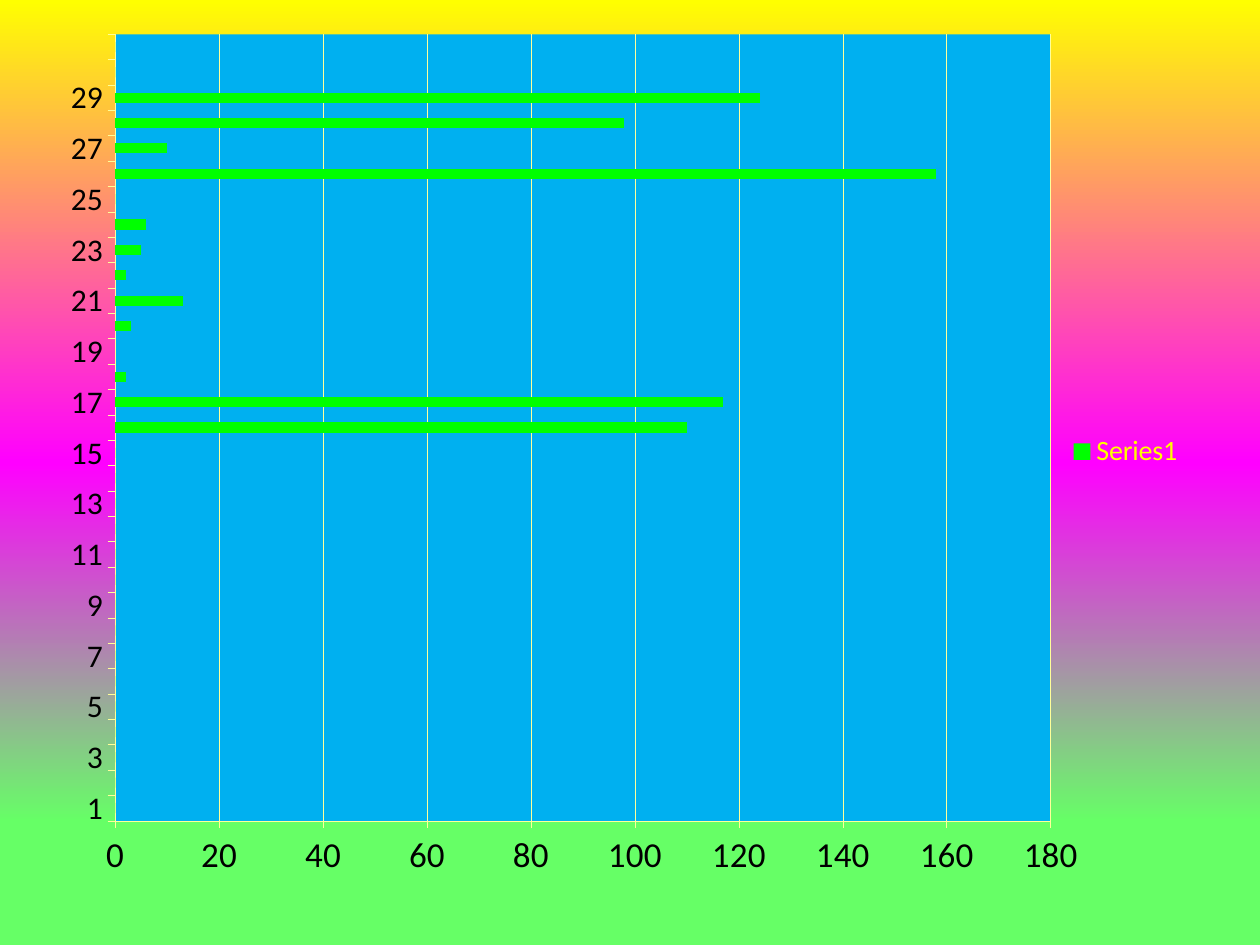
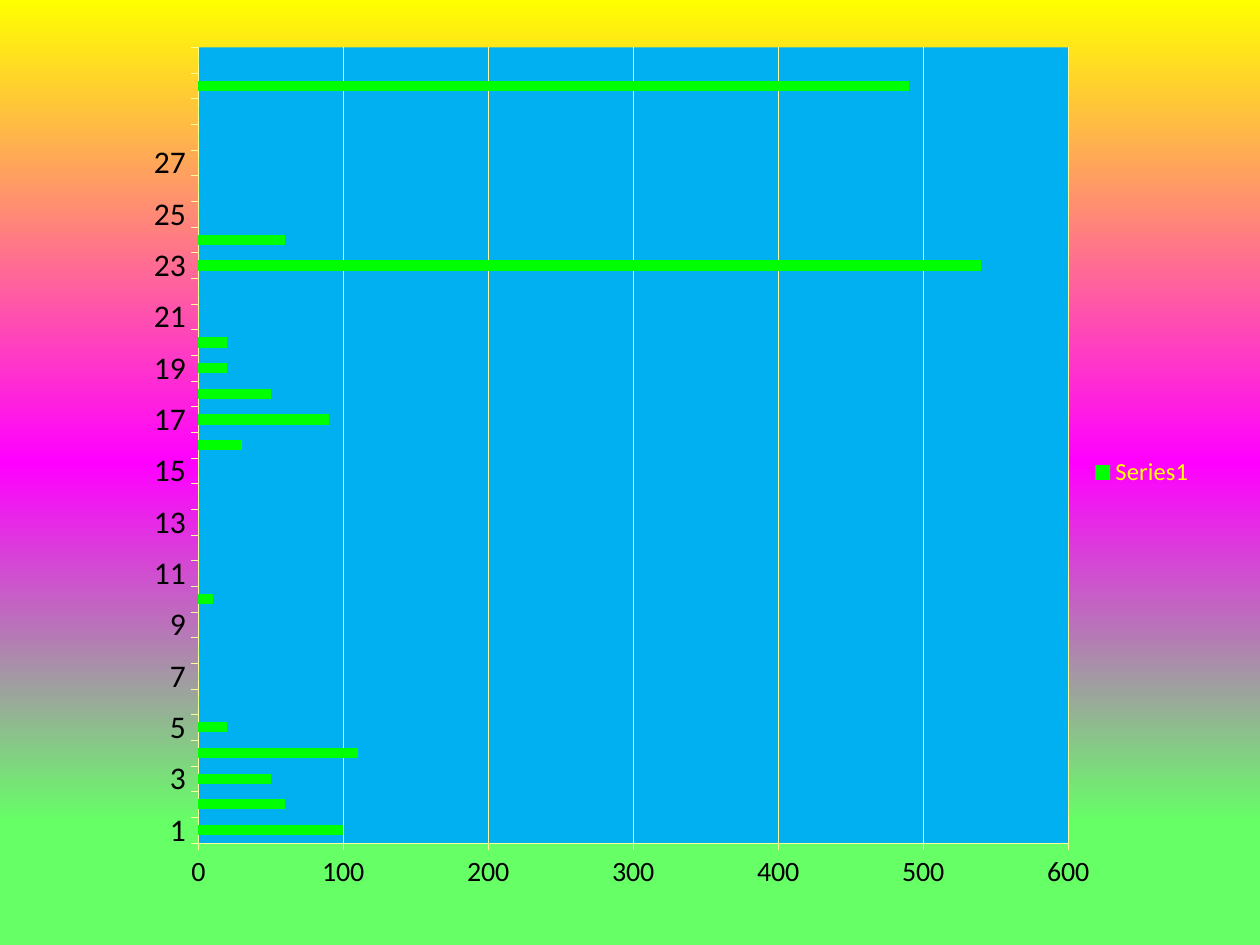
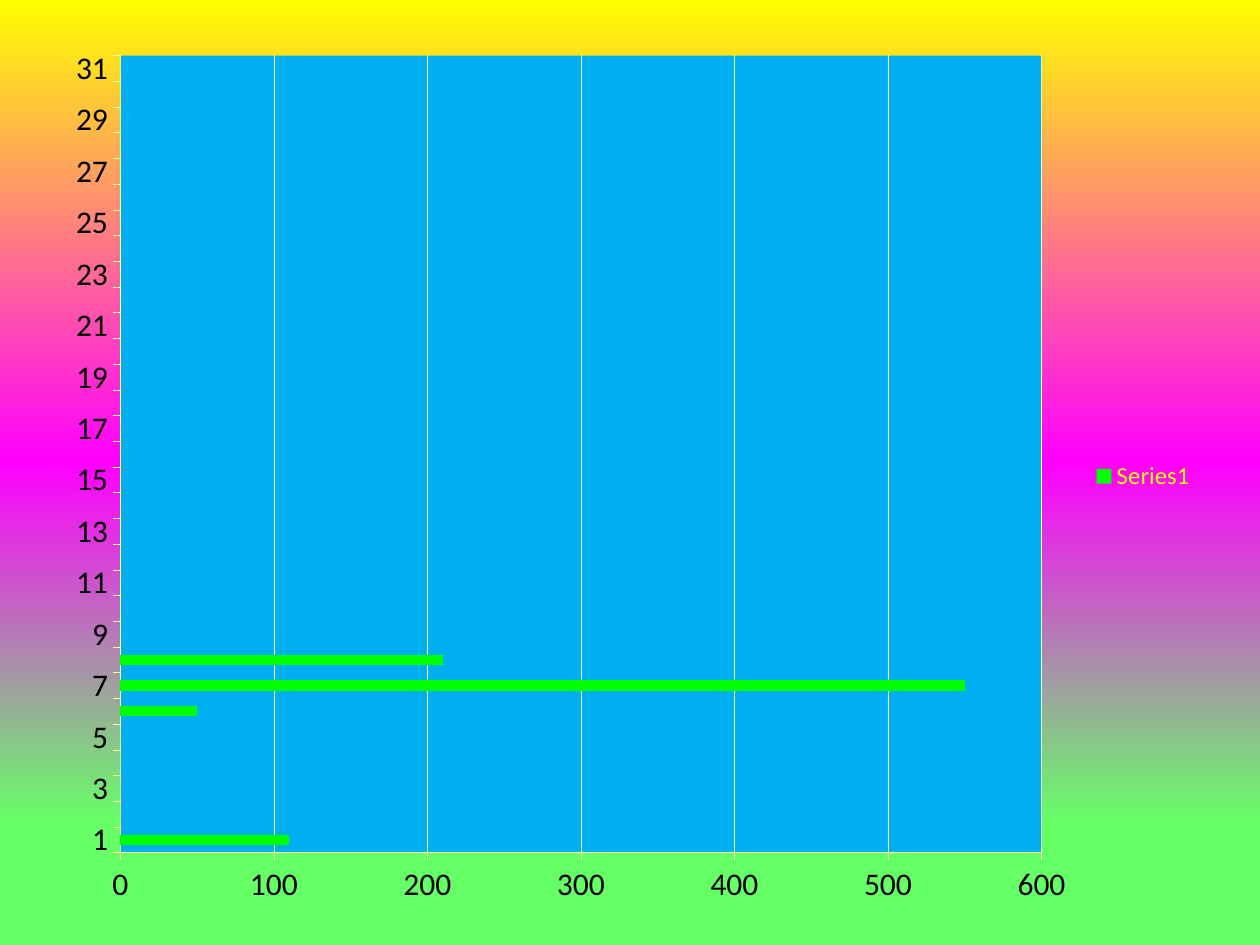
"""Build three slides of daily bar charts on one shared gradient background."""
from copy import deepcopy

from lxml import etree
from pptx import Presentation
from pptx.chart.data import CategoryChartData
from pptx.dml.color import RGBColor
from pptx.enum.chart import XL_CHART_TYPE, XL_LEGEND_POSITION, XL_TICK_MARK
from pptx.oxml import parse_xml
from pptx.oxml.ns import nsdecls, qn
from pptx.util import Inches, Pt

STACKED = XL_CHART_TYPE.BAR_STACKED
RIGHT = XL_LEGEND_POSITION.RIGHT
OUTSIDE = XL_TICK_MARK.OUTSIDE
NO_TICK = XL_TICK_MARK.NONE

FONT = "Calibri"
SKY = [(0, "FFFF00"), (0.49, "FF00FF"), (0.87, "66FF66")]
BLACK, YELLOW, PALE = "000000", "FFFF00", "FFFF99"
BLUE, GREEN = "00B0F0", "00FF00"
ROWS = 31

MONTHS = [
    {
        "box": (0.5, 0.17, 9, 6.83), "plot": (0.046, 0.015, 0.825, 0.914),
        "days": 29, "top": 180, "step": 20,
        "base": 9, "value": 20, "key": 16,
        "bars": {16: 110, 17: 117, 18: 2, 20: 3, 21: 13, 22: 2, 23: 5,
                 24: 6, 26: 158, 27: 10, 28: 98, 29: 124},
        "gaps": [19],
    },
    {
        "box": (0.83, 0.25, 8.75, 7), "plot": (0.085, 0.018, 0.789, 0.902),
        "days": 28, "top": 600, "step": 100,
        "base": 10, "value": 16, "key": 14,
        "bars": {1: 100, 2: 60, 3: 50, 4: 110, 5: 20, 10: 10, 16: 30, 17: 90,
                 18: 50, 19: 20, 20: 20, 23: 540, 24: 60, 30: 490},
        "gaps": [9, 11, 12],
    },
    {
        "box": (0.42, 0.25, 9.17, 7.06), "plot": None,
        "days": 31, "top": 600, "step": 100,
        "base": 10, "value": 18, "key": 14,
        "bars": {1: 110, 6: 50, 7: 550, 8: 210},
        "gaps": [],
    },
]


def rgb(code):
    """Return the colour for a hex string."""
    return RGBColor.from_string(code)


def style(font, size, color):
    """Set the typeface, size and colour of a chart font."""
    font.name, font.size = FONT, Pt(size)
    font.color.rgb = rgb(color)


def rule(line):
    """Draw an axis or grid line in the thin pale style."""
    line.color.rgb = rgb(PALE)
    line.width = Pt(0.25)


def paint(master):
    """Give the master the gradient that every slide shares."""
    fill = master.background.fill
    fill.gradient()
    fill.gradient_angle = 270
    stops = master.element.find(".//" + qn("a:gsLst"))
    stops.append(deepcopy(stops[-1]))
    for stop, (place, code) in zip(fill.gradient_stops, SKY):
        stop.position = place
        stop.color.rgb = rgb(code)


def frame(chart, plot):
    """Fill the plot area and fix its inner bounds when given."""
    area = chart.element.find(".//" + qn("c:plotArea"))
    area.append(parse_xml(
        f'<c:spPr {nsdecls("c", "a")}><a:solidFill><a:srgbClr val="{BLUE}"/>'
        '</a:solidFill><a:ln><a:noFill/></a:ln></c:spPr>'))
    if plot:
        for old in area.findall(qn("c:layout")):
            area.remove(old)
        layout = etree.Element(qn("c:layout"))
        manual = etree.SubElement(layout, qn("c:manualLayout"))
        parts = [("layoutTarget", "inner"), ("xMode", "edge"), ("yMode", "edge")]
        parts += zip("xywh", plot)
        for tag, val in parts:
            etree.SubElement(manual, qn("c:" + tag)).set("val", str(val))
        area.insert(0, layout)


def draw(slide, month):
    """Add the bar chart of one month."""
    days = range(1, ROWS + 1)
    data = CategoryChartData()
    data.categories = [str(d) if d <= month["days"] else "" for d in days]
    data.add_series("Series1", [
        None if d in month["gaps"] else month["bars"].get(d, 0) for d in days])
    box = [Inches(n) for n in month["box"]]
    chart = slide.shapes.add_chart(STACKED, *box, data).chart
    chart.has_title = False
    style(chart.font, month["base"], YELLOW)

    bars = chart.plots[0]
    bars.gap_width, bars.overlap = 150, 100
    bars.vary_by_categories = False
    fill = bars.series[0].format.fill
    fill.solid()
    fill.fore_color.rgb = rgb(GREEN)

    scale = chart.value_axis
    for axis, size in ((chart.category_axis, 18), (scale, month["value"])):
        axis.major_tick_mark, axis.minor_tick_mark = OUTSIDE, NO_TICK
        style(axis.tick_labels.font, size, BLACK)
        rule(axis.format.line)
    scale.minimum_scale, scale.maximum_scale = 0, month["top"]
    scale.major_unit = month["step"]
    scale.has_major_gridlines = True
    rule(scale.major_gridlines.format.line)

    chart.has_legend = True
    chart.legend.position = RIGHT
    chart.legend.include_in_layout = False
    style(chart.legend.font, month["key"], YELLOW)
    frame(chart, month["plot"])


def main():
    """Build and save the deck."""
    deck = Presentation()
    deck.slide_width, deck.slide_height = Inches(10), Inches(7.5)
    paint(deck.slide_master)
    for month in MONTHS:
        draw(deck.slides.add_slide(deck.slide_layouts[6]), month)
    deck.save("out.pptx")


if __name__ == "__main__":
    main()
